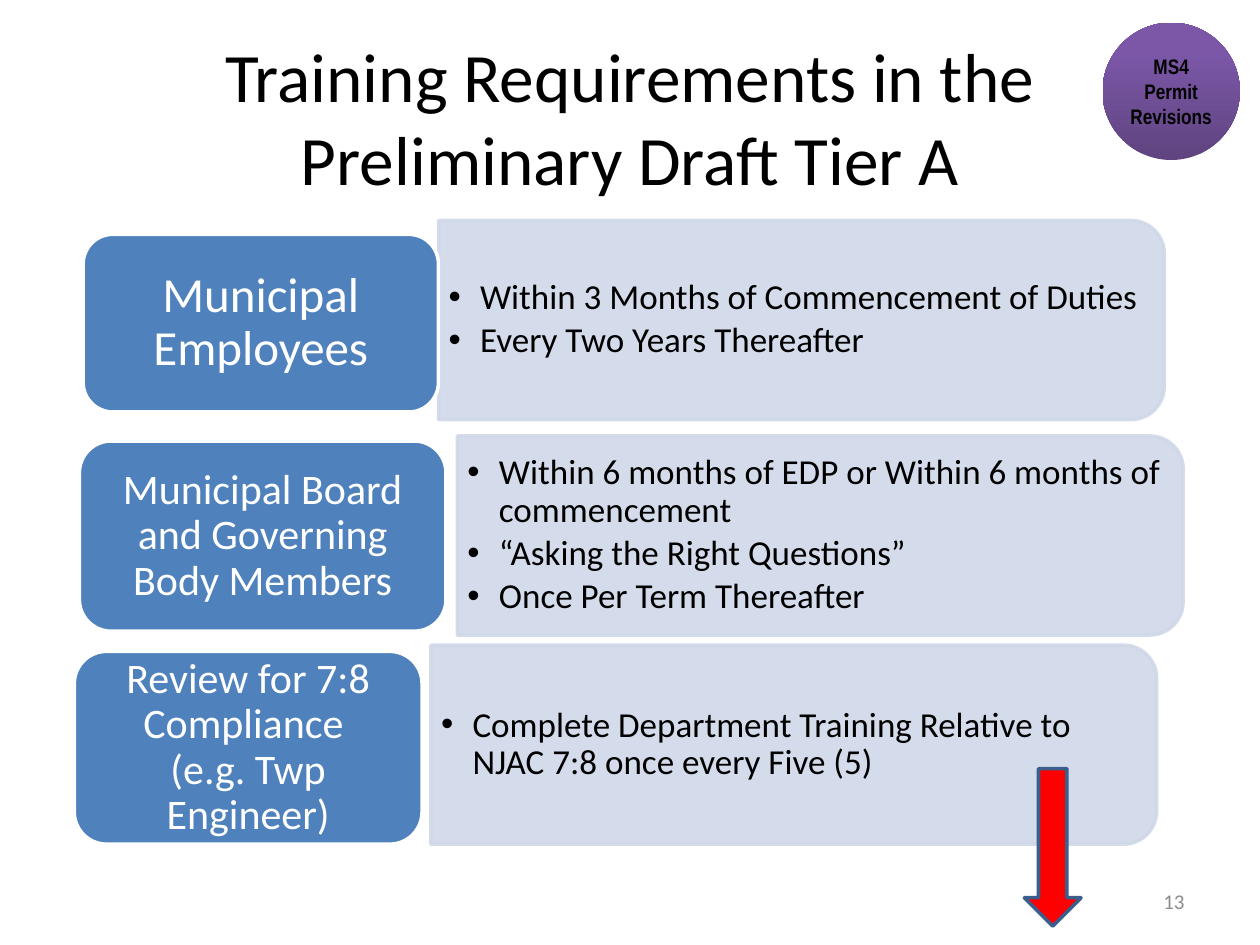
from pptx import Presentation
from pptx.util import Inches, Pt
from pptx.dml.color import RGBColor
from pptx.enum.shapes import MSO_SHAPE as Kind
from pptx.enum.text import PP_ALIGN as Align, MSO_ANCHOR as Anchor
from pptx.oxml.ns import qn
from lxml.etree import SubElement

TITLE = "Training Requirements in the Preliminary Draft Tier A"
ROWS = [
    dict(label="Municipal Employees", size=28, pad=(0.12, 0.06),
         box=(0.66, 1.86, 2.82, 1.41), panel=(3.48, 1.75),
         items=["Within 3 Months of Commencement of Duties",
                "Every Two Years Thereafter"]),
    dict(label="Municipal Board and Governing Body Members", size=24, pad=(0.1, 0.05),
         box=(0.63, 3.5, 2.91, 1.51), panel=(3.63, 3.46),
         items=["Within 6 months of EDP or Within 6 months of commencement",
                "“Asking the Right Questions”",
                "Once Per Term Thereafter"]),
    dict(label="Review for 7:8 Compliance \n(e.g. Twp Engineer)", size=24, pad=(0.1, 0.05),
         box=(0.59, 5.17, 2.76, 1.53), panel=(3.42, 5.12),
         items=["Complete Department Training Relative to NJAC 7:8 once every Five (5)"]),
]
WIDE, HIGH, GAP = 5.76, 1.58, 0.08

deck = Presentation()
deck.slide_width, deck.slide_height = Inches(10), Inches(7.5)
slide = deck.slides.add_slide(deck.slide_layouts[6])


def paint(hue):
    return RGBColor.from_string(hue)


def shape(kind, box, fill=None, line=None, alpha=None):
    item = slide.shapes.add_shape(kind, *map(Inches, box))
    item.shadow.inherit = False
    if fill:
        item.fill.solid()
        item.fill.fore_color.rgb = paint(fill)
    if line:
        item.line.color.rgb = paint(line)
        item.line.width = Pt(2)
    else:
        item.line.fill.background()
    if alpha:
        for tone in item._element.spPr.iter(qn("a:srgbClr")):
            SubElement(tone, qn("a:alpha"), val=str(alpha * 1000))
    return item


def textbox(box):
    return slide.shapes.add_textbox(*map(Inches, box))


def write(item, lines, size=20, color="000000", font="Calibri", bold=False,
          align=Align.CENTER, pad=(0.1, 0.05), space=None, after=0, bullet=False):
    frame = item.text_frame
    frame.word_wrap = True
    frame.vertical_anchor = Anchor.MIDDLE
    frame.margin_left = frame.margin_right = Inches(pad[0])
    frame.margin_top = frame.margin_bottom = Inches(pad[1])
    for i, line in enumerate(lines):
        para = frame.add_paragraph() if i else frame.paragraphs[0]
        para.text = line
        para.alignment = align
        para.line_spacing = space
        para.space_after = Pt(after)
        for run in para.runs:
            run.font.name, run.font.size, run.font.bold = font, Pt(size), bold
            run.font.color.rgb = paint(color)
        if bullet:
            prop = para._p.get_or_add_pPr()
            prop.set("marL", str(Inches(0.25)))
            prop.set("indent", str(-Inches(0.25)))
            SubElement(prop, qn("a:buFont"), typeface="Arial")
            SubElement(prop, qn("a:buChar"), char="•")


write(textbox((0.5, 0.3, 9, 1.25)), [TITLE], size=39.6)

for row in ROWS:
    left, top = row["panel"]
    turn = (WIDE - HIGH) / 2
    panel = shape(Kind.ROUND_2_SAME_RECTANGLE, (left + turn, top - turn, HIGH, WIDE),
                  "D0D8E8", "D0D8E8", alpha=90)
    panel.rotation = 90
    write(textbox((left, top + GAP, WIDE - GAP, HIGH - 2 * GAP)), row["items"],
          align=Align.LEFT, pad=(0.08, 0.04), space=0.9, after=3, bullet=True)
    label = shape(Kind.ROUNDED_RECTANGLE, row["box"], "4F81BD", "FFFFFF")
    write(label, [row["label"]], size=row["size"], color="FFFFFF",
          pad=row["pad"], space=0.9)

write(textbox((7.17, 6.95, 2.33, 0.4)), ["13"], size=12, color="8C8C8C", align=Align.RIGHT)

badge = shape(Kind.OVAL, (8.75, 0.18, 1.09, 1.09))
badge.fill.gradient()
badge.fill.gradient_angle = 90
for stop, (hue, spot) in zip(badge.fill.gradient_stops, [("5F4480", 0), ("7C57A8", 0.8)]):
    stop.color.rgb = paint(hue)
    stop.position = spot
write(badge, ["MS4 Permit Revisions"], size=12, font="Arial Narrow", bold=True, pad=(0.02, 0.02))

shape(Kind.DOWN_ARROW, (8.13, 6.1, 0.45, 1.25), "FF0000", "3A5F8C")

deck.save("out.pptx")
